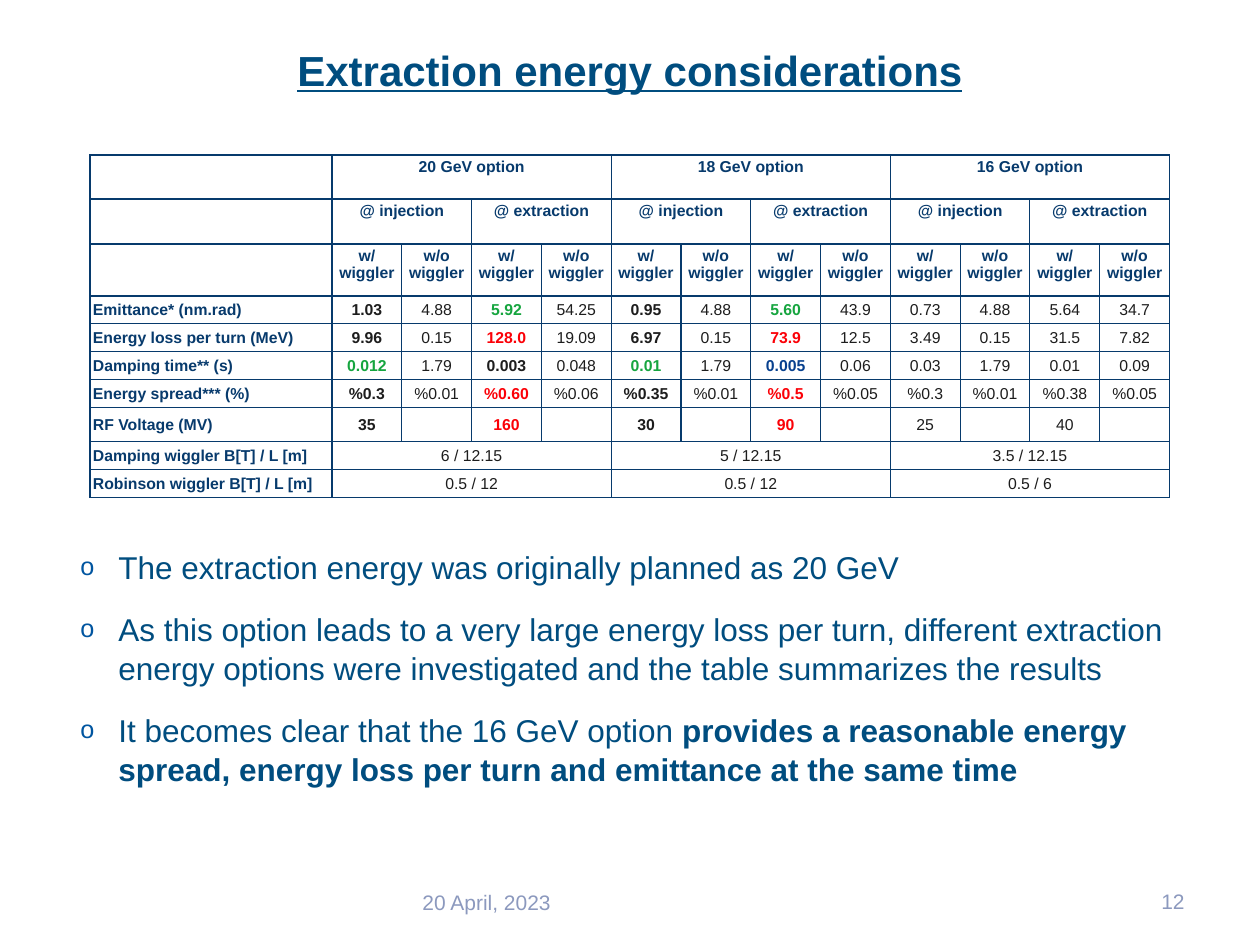
from dataclasses import dataclass
from lxml import etree
from pptx import Presentation
from pptx import util as u
from pptx.dml.color import RGBColor
from pptx.enum import text
from pptx.oxml.ns import qn

MID, TOP = text.MSO_ANCHOR.MIDDLE, text.MSO_ANCHOR.TOP
LEFT, MIDDLE, RIGHT = text.PP_ALIGN.LEFT, text.PP_ALIGN.CENTER, text.PP_ALIGN.RIGHT


@dataclass(frozen=True)
class Theme:
    face: str = "Arial"
    head: str = "004D7F"
    bullet: str = "0055A0"
    navy: str = "073A6C"
    ink: str = "1D1D1D"
    green: str = "16A53F"
    red: str = "FB0007"
    blue: str = "07408E"
    foot: str = "8C99BE"
    big: int = 24
    body: int = 18
    small: int = 12
    cell: int = 9


T = Theme()

HEADS = [
    ["20 GeV option", "18 GeV option", "16 GeV option"],
    ["@ injection", "@ extraction"] * 3,
    ["w/ wiggler", "w/o wiggler"] * 6,
]
ROWS = [
    ("Emittance* (nm.rad)", "1.03 4.88 5.92 54.25 0.95 4.88 5.60 43.9 0.73 4.88 5.64 34.7".split()),
    ("Energy loss per turn (MeV)",
     "9.96 0.15 128.0 19.09 6.97 0.15 73.9 12.5 3.49 0.15 31.5 7.82".split()),
    ("Damping time** (s)",
     "0.012 1.79 0.003 0.048 0.01 1.79 0.005 0.06 0.03 1.79 0.01 0.09".split()),
    ("Energy spread*** (%)",
     "%0.3 %0.01 %0.60 %0.06 %0.35 %0.01 %0.5 %0.05 %0.3 %0.01 %0.38 %0.05".split()),
    ("RF Voltage (MV)", ["35", "", "160", "", "30", "", "90", "", "25", "", "40", ""]),
    ("Damping wiggler B[T] / L [m]", ["6 / 12.15", "5 / 12.15", "3.5 / 12.15"]),
    ("Robinson wiggler B[T] / L [m]", ["0.5 / 12", "0.5 / 12", "0.5 / 6"]),
]
HIGHS = [44, 45, 52, 28, 28, 28, 28, 34, 28, 28]
# Highlighted values, by table row and column
MARKS = {
    (3, 3): T.green, (3, 7): T.green, (5, 1): T.green, (5, 5): T.green,
    (4, 3): T.red, (4, 7): T.red, (6, 3): T.red, (6, 7): T.red,
    (7, 3): T.red, (7, 7): T.red, (5, 7): T.blue,
}
# Each point is its plain text and its bold ending
POINTS = [
    ("The extraction energy was originally planned as 20 GeV", ""),
    ("As this option leads to a very large energy loss per turn, different extraction "
     "energy options were investigated and the table summarizes the results", ""),
    ("It becomes clear that the 16 GeV option ",
     "provides a reasonable energy spread, energy loss per turn and emittance at the same time"),
]


def px(n):
    return u.Emu(round(n * 914400 / 126))


def style(para, size, color, bold=False, align=LEFT):
    para.alignment = align
    font = para.font
    font.name, font.size, font.bold = T.face, u.Pt(size), bold
    font.color.rgb = RGBColor.from_string(color)


def title(slide, x, y, w, h):
    shape = slide.shapes.title
    shape.left, shape.top, shape.width, shape.height = map(px, (x, y, w, h))
    frame = shape.text_frame
    frame.text = "Extraction energy considerations"
    frame.vertical_anchor = MID
    para = frame.paragraphs[0]
    style(para, T.big, T.head, True, MIDDLE)
    para.font.underline = True


def border(cell):
    props = cell._tc.get_or_add_tcPr()
    for side in ("a:lnL", "a:lnR", "a:lnT", "a:lnB"):
        line = etree.SubElement(props, qn(side), w=str(u.Pt(0.75)))
        fill = etree.SubElement(line, qn("a:solidFill"))
        etree.SubElement(fill, qn("a:srgbClr"), val=T.navy)


def write(cell, words, color, bold, align, anchor):
    cell.text = words
    cell.vertical_anchor = anchor
    style(cell.text_frame.paragraphs[0], T.cell, color, bold, align)


def table(slide, x, y, w, label):
    """Draw the results; each row's values share the twelve columns equally."""
    rows = [("", heads) for heads in HEADS] + ROWS
    grid = slide.shapes.add_table(len(rows), 13, *map(px, (x, y, w, sum(HIGHS)))).table
    grid.first_row = grid.horz_banding = False
    for i, col in enumerate(grid.columns):
        col.width = px((w - label) / 12 if i else label)
    for row, high in zip(grid.rows, HIGHS):
        row.height = px(high)
    for cell in grid.iter_cells():
        border(cell)
        cell.fill.background()
        cell.margin_left = cell.margin_right = cell.margin_top = cell.margin_bottom = px(3)
    for r, (name, vals) in enumerate(rows):
        head = r < len(HEADS)
        anchor = TOP if head else MID
        write(grid.cell(r, 0), name, T.navy, True, LEFT, anchor)
        span = 12 // len(vals)
        for i, val in enumerate(vals):
            c = 1 + i * span
            cell = grid.cell(r, c)
            if span > 1:
                cell.merge(grid.cell(r, c + span - 1))
            color = T.navy if head else MARKS.get((r, c), T.ink)
            bold = head or (span == 1 and c < 9 and c % 2 == 1)
            write(cell, val, color, bold, MIDDLE, anchor)


def box(slide, x, y, w, h, anchor):
    frame = slide.shapes.add_textbox(*map(px, (x, y, w, h))).text_frame
    frame.word_wrap = True
    frame.vertical_anchor = anchor
    return frame


def points(slide, x, y, w, h):
    frame = box(slide, x, y, w, h, TOP)
    for i, (plain, strong) in enumerate(POINTS):
        para = frame.add_paragraph() if i else frame.paragraphs[0]
        props = para._p.get_or_add_pPr()
        props.set("marL", str(px(43)))
        props.set("indent", str(px(-38)))
        color = etree.SubElement(props, qn("a:buClr"))
        etree.SubElement(color, qn("a:srgbClr"), val=T.bullet)
        etree.SubElement(props, qn("a:buSzPct"), val="80000")
        etree.SubElement(props, qn("a:buFont"), typeface=T.face)
        etree.SubElement(props, qn("a:buChar"), char="o")
        para.line_spacing = 1.04
        if i:
            para.space_before = u.Pt(13)
        style(para, T.body, T.head)
        para.add_run().text = plain
        if strong:
            run = para.add_run()
            run.text = strong
            run.font.bold = True


def footer(slide, words, x, y, w, h, align):
    frame = box(slide, x, y, w, h, MID)
    frame.text = words
    style(frame.paragraphs[0], T.small, T.foot, align=align)


def main():
    deck = Presentation()
    deck.slide_width, deck.slide_height = px(1260), px(945)
    slide = deck.slides.add_slide(deck.slide_layouts[5])
    title(slide, 63, 33, 1134, 73)
    table(slide, 90, 155, 1080, 242)
    points(slide, 63, 540, 1134, 285)
    footer(slide, "20 April, 2023", 410, 877, 294, 50, LEFT)
    footer(slide, "12", 1128, 876, 69, 50, RIGHT)
    deck.save("out.pptx")


if __name__ == "__main__":
    main()
